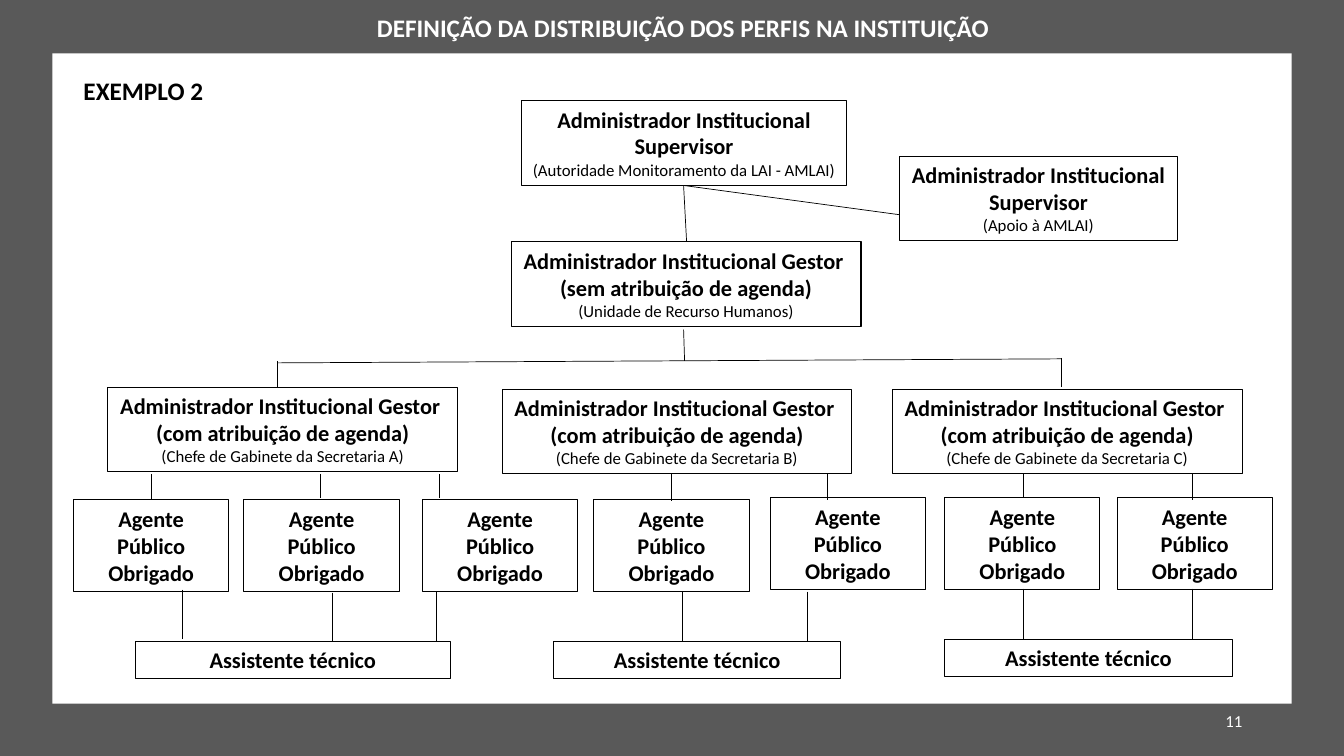
from lxml.etree import SubElement
from pptx import Presentation
from pptx.dml.color import RGBColor
from pptx.enum.shapes import MSO_CONNECTOR, MSO_SHAPE
from pptx.enum.text import MSO_ANCHOR, MSO_AUTO_SIZE, PP_ALIGN
from pptx.oxml.ns import qn
from pptx.util import Inches, Pt

# Content
TITLE = "DEFINIÇÃO DA DISTRIBUIÇÃO DOS PERFIS NA INSTITUIÇÃO"
EXAMPLE = "EXEMPLO 2"
PAGE_NUMBER = "11"
SUPERVISOR = "Administrador Institucional Supervisor"
MANAGER = "Administrador Institucional Gestor "
AGENT = "Agente Público Obrigado"
ASSISTANT = "Assistente técnico"

# Profiles: left, top, width, bold lines, small line
PROFILES = [
    (5.17, 1, 3.23, [SUPERVISOR], "(Autoridade Monitoramento da LAI - AMLAI)"),
    (8.92, 1.55, 2.76, [SUPERVISOR], "(Apoio à AMLAI)"),
    (5.07, 2.4, 3.47, [MANAGER, "(sem atribuição de agenda)"],
     "(Unidade de Recurso Humanos)"),
]
# Departments: letter, left, top
DEPARTMENTS = [("A", 1.07, 3.84), ("B", 4.98, 3.86), ("C", 8.85, 3.86)]
for letter, left, top in DEPARTMENTS:
    PROFILES.append((left, top, 3.47, [MANAGER, "(com atribuição de agenda)"],
                     f"(Chefe de Gabinete da Secretaria {letter})"))

# Agents: left, top
AGENTS = [(0.73, 4.96), (2.42, 4.96), (4.19, 4.96), (5.89, 4.96),
          (7.64, 4.94), (9.37, 4.94), (11.08, 4.94)]
# Assistants: left, top, width
ASSISTANTS = [(1.34, 6.36, 3.13), (5.49, 6.36, 2.85), (9.37, 6.34, 2.85)]

# Sloping links: start x, start y, end x, end y
LINKS = [(6.78, 1.84, 6.81, 2.4), (6.78, 1.84, 8.92, 2.13),
         (6.78, 3.27, 6.79, 3.58), (2.75, 3.6, 10.53, 3.56)]
# Vertical links: x, top, bottom
DROPS = [
    (2.75, 3.58, 3.84), (10.53, 3.55, 3.84),
    (1.5, 4.7, 4.96), (3.18, 4.7, 4.94), (4.36, 4.7, 4.94), (6.66, 4.7, 4.97),
    (8.21, 4.7, 4.96), (10.15, 4.7, 4.94), (11.83, 4.7, 4.96),
    (1.81, 5.85, 6.34), (3.3, 5.88, 6.36), (4.33, 5.87, 6.36),
    (6.77, 5.87, 6.36), (8.01, 5.87, 6.36), (10.15, 5.84, 6.34),
    (11.83, 5.84, 6.34),
]


def color(value):
    return RGBColor.from_string(value)


def write(frame, text, first=False, size=16, bold=True, ink="000000",
          align=PP_ALIGN.CENTER):
    para = frame.paragraphs[0] if first else frame.add_paragraph()
    para.alignment = align
    span = para.add_run()
    span.text = text
    span.font.name = "Calibri"
    span.font.size = Pt(size)
    span.font.bold = bold
    span.font.color.rgb = color(ink)


def place(shape, left, top, width, height):
    shape.left, shape.top = Inches(left), Inches(top)
    shape.width, shape.height = Inches(width), Inches(height)


def add_box(left, top, width, height, fill=None, line=None):
    box = page.shapes.add_shape(MSO_SHAPE.RECTANGLE, Inches(left), Inches(top),
                                Inches(width), Inches(height))
    box.shadow.inherit = False
    if fill:
        box.fill.solid()
        box.fill.fore_color.rgb = color(fill)
    else:
        box.fill.background()
    if line:
        box.line.color.rgb = color(line)
        box.line.width = Pt(0.75)
    else:
        box.line.fill.background()
    return box


def add_role(left, top, width, height, lines, note=None):
    frame = add_box(left, top, width, height, line="000000").text_frame
    frame.word_wrap = True
    frame.vertical_anchor = MSO_ANCHOR.TOP
    frame.auto_size = MSO_AUTO_SIZE.SHAPE_TO_FIT_TEXT
    for index, text in enumerate(lines):
        write(frame, text, first=index == 0)
    if note:
        write(frame, note, size=12, bold=False)


def add_label(left, top, width, height, text, anchor=MSO_ANCHOR.TOP, **style):
    box = page.shapes.add_textbox(Inches(left), Inches(top),
                                  Inches(width), Inches(height))
    box.text_frame.word_wrap = True
    box.text_frame.vertical_anchor = anchor
    write(box.text_frame, text, first=True, **style)


def add_link(x1, y1, x2, y2):
    link = page.shapes.add_connector(MSO_CONNECTOR.STRAIGHT, Inches(x1),
                                     Inches(y1), Inches(x2), Inches(y2))
    link.line.color.rgb = color("000000")
    link.line.width = Pt(0.5)
    SubElement(link._element.spPr, qn("a:effectLst"))


deck = Presentation()
deck.slide_width, deck.slide_height = Inches(13.33), Inches(7.5)
page = deck.slides.add_slide(deck.slide_layouts[5])

# Frame and white panel
add_box(0, 0, 13.33, 7.5, fill="595959")
add_box(0.52, 0.53, 12.29, 6.45, fill="FFFFFF")

# Title, brought in front of the frame
title = page.shapes.title
place(title, 3.58, 0.07, 6.39, 0.4)
title.text_frame.word_wrap = False
title.text_frame.vertical_anchor = MSO_ANCHOR.TOP
title.text_frame.auto_size = MSO_AUTO_SIZE.SHAPE_TO_FIT_TEXT
write(title.text_frame, TITLE, first=True, size=18, ink="FFFFFF")
title._element.getparent().append(title._element)

# Labels
add_label(0.73, 0.7, 3.23, 0.4, EXAMPLE, size=18, align=PP_ALIGN.LEFT)
add_label(9.42, 6.95, 3, 0.4, PAGE_NUMBER, anchor=MSO_ANCHOR.MIDDLE, size=12,
          bold=False, ink="FFFFFF", align=PP_ALIGN.RIGHT)

# Organisation chart
for left, top, width, lines, note in PROFILES:
    add_role(left, top, width, 0.84, lines, note)
for left, top in AGENTS:
    add_role(left, top, 1.54, 0.91, [AGENT])
for left, top, width in ASSISTANTS:
    add_role(left, top, width, 0.37, [ASSISTANT])

# Links
for ends in LINKS:
    add_link(*ends)
for x, top, bottom in DROPS:
    add_link(x, top, x, bottom)

deck.save("out.pptx")
